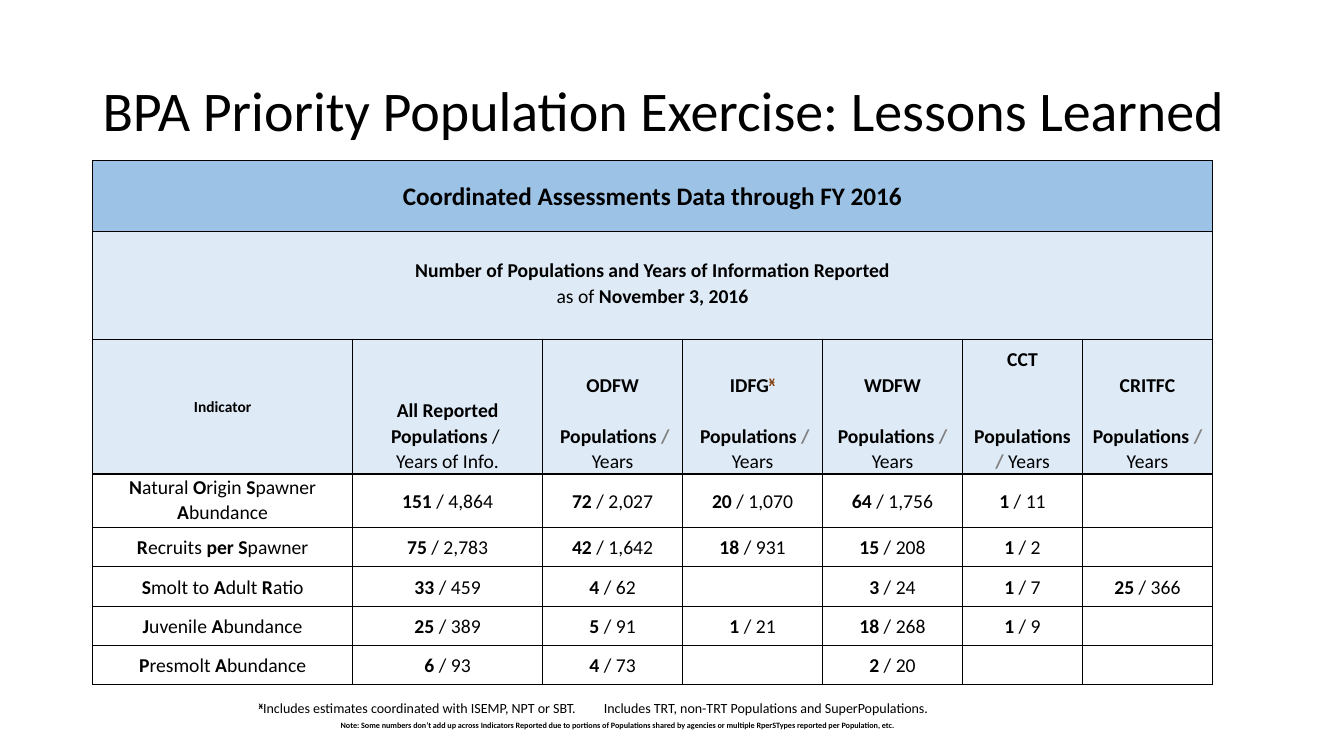
from lxml import etree
from pptx import Presentation
from pptx.dml.color import RGBColor as RGB
from pptx.enum.text import MSO_ANCHOR as ANCHOR, PP_ALIGN as ALIGN
from pptx.oxml.ns import qn
from pptx.util import Emu, Inches, Pt

COLORS = {"ink": "000000", "grey": "7F7F7F", "brown": "833C0B",
          "banner": "9CC2E5", "header": "DEEAF6", "body": "FFFFFF"}
LINE = 18.3  # height in points of one 14 pt table line


def bold_marks(text):
    """Split text into runs; the parts between asterisks are bold."""
    return [(part, {"bold": i % 2 == 1}) for i, part in enumerate(text.split("*")) if part]


def write(p, content, font="Calibri", size=14, color="ink", bold=False, base=0,
          align=ALIGN.LEFT, spacing=1.0, before=0):
    """Fill a paragraph with marked text or with a list of (text, format) runs."""
    p.alignment, p.line_spacing, p.space_before = align, spacing, Pt(before)
    for text, own in bold_marks(content) if isinstance(content, str) else content:
        r = p.add_run()
        r.text = text
        r.font.name = font
        r.font.size = Pt(own.get("size", size))
        r.font.bold = own.get("bold", bold)
        r.font.color.rgb = RGB.from_string(COLORS[own.get("color", color)])
        if own.get("base", base):
            r.font._element.set("baseline", str(own.get("base", base) * 1000))


class Slide:
    """A slide on a square grid 134.4 columns wide and 75.6 rows high."""

    def __init__(self, prs):
        self.s = prs.slides.add_slide(prs.slide_layouts[6])
        self.unit = prs.slide_width / 134.4

    def grid(self, *lengths):
        return [Emu(round(n * self.unit)) for n in lengths]

    def text(self, box, paragraphs, anchor=ANCHOR.TOP, **fmt):
        tf = self.s.shapes.add_textbox(*self.grid(*box)).text_frame
        tf.word_wrap, tf.vertical_anchor = True, anchor
        for i, content in enumerate(paragraphs):
            write(tf.add_paragraph() if i else tf.paragraphs[0], content, **fmt)
        return tf

    def table(self, left, top, cols, rows):
        box = self.grid(left, top, sum(cols), sum(rows))
        t = self.s.shapes.add_table(len(rows), len(cols), *box).table
        t.first_row = t.horz_banding = False
        for col, width in zip(t.columns, self.grid(*cols)):
            col.width = width
        for row, height in zip(t.rows, self.grid(*rows)):
            row.height = height
        for cell in t.iter_cells():
            self.border(cell)
            self.cell(cell, [])
        return t

    def cell(self, cell, paragraphs, fill="body", anchor=ANCHOR.MIDDLE, gap=0, **fmt):
        """Style a cell; gap is the space in points above its last paragraph."""
        cell.margin_left = cell.margin_right = Inches(0.06)
        cell.margin_top = cell.margin_bottom = 0
        cell.vertical_anchor = anchor
        cell.fill.solid()
        cell.fill.fore_color.rgb = RGB.from_string(COLORS[fill])
        tf = cell.text_frame
        for i, content in enumerate(paragraphs):
            write(tf.add_paragraph() if i else tf.paragraphs[0], content, align=ALIGN.CENTER,
                  spacing=1.07, before=gap if i else 0, **fmt)

    def border(self, cell):
        tcPr = cell._tc.get_or_add_tcPr()
        for side in ("a:lnL", "a:lnR", "a:lnT", "a:lnB"):
            ln = etree.SubElement(tcPr, qn(side), w=str(Pt(1)))
            fill = etree.SubElement(ln, qn("a:solidFill"))
            etree.SubElement(fill, qn("a:srgbClr"), val=COLORS["ink"])


# Agency name, superscript mark, text before the slash, blank lines below the name
AGENCIES = [("ODFW", "", " Populations", 1), ("IDFG", "Ӿ", " Populations", 1),
            ("WDFW", "", "Populations", 1), ("CCT", "", "Populations", 2),
            ("CRITFC", "", "Populations", 1)]

# Indicator, then populations / years: all reported and each agency
INDICATORS = [
    ("*N*atural *O*rigin *S*pawner *A*bundance",
     "151 / 4,864", "72 / 2,027", "20 / 1,070", "64 / 1,756", "1 / 11", ""),
    ("*R*ecruits *per S*pawner",
     "75 / 2,783", "42 / 1,642", "18 / 931", "15 / 208", "1 / 2", ""),
    ("*S*molt to *A*dult *R*atio",
     "33 / 459", "4 / 62", "", "3 / 24", "1 / 7", "25 / 366"),
    ("*J*uvenile *A*bundance",
     "25 / 389", "5 / 91", "1 / 21", "18 / 268", "1 / 9", ""),
    ("*P*resmolt *A*bundance",
     "6 / 93", "4 / 73", "", "2 / 20", "", ""),
]


def add_assessment_table(slide):
    t = slide.table(9.27, 16.03, [26, 19, 14, 14, 14, 12, 13],
                    [7.1, 10.8, 13.5, 5.35] + [3.93] * 4)

    # Banner rows
    for row in (0, 1):
        t.cell(row, 0).merge(t.cell(row, 6))
    slide.cell(t.cell(0, 0), ["*Coordinated Assessments Data through FY 2016*"],
               fill="banner", size=18)
    slide.cell(t.cell(1, 0), ["*Number of Populations and Years of Information Reported*",
                              "as of *November 3, 2016*"], fill="header")
    t.cell(1, 0).margin_bottom = Inches(0.04)

    # Column headings
    slide.cell(t.cell(2, 0), ["*Indicator*"], fill="header", size=11)
    slide.cell(t.cell(2, 1), ["*All Reported Populations* / ", "Years of Info."],
               fill="header", anchor=ANCHOR.BOTTOM)
    for col, (agency, mark, populations, blanks) in enumerate(AGENCIES, 2):
        name = [(agency, {})] + ([(mark, {"color": "brown", "base": 30})] if mark else [])
        units = [(populations, {}), (" / ", {"color": "grey"}), ("Years", {"bold": False})]
        slide.cell(t.cell(2, col), [name, units], fill="header", anchor=ANCHOR.BOTTOM,
                   gap=blanks * LINE, bold=True)

    # Indicator rows
    for row, (indicator, *counts) in enumerate(INDICATORS, 3):
        slide.cell(t.cell(row, 0), [indicator], anchor=ANCHOR.TOP if row == 3 else ANCHOR.MIDDLE)
        for col, count in enumerate(counts, 1):
            if count:
                populations, years = count.split(" / ")
                slide.cell(t.cell(row, col), [f"*{populations}* / {years}"])


def add_footnotes(slide):
    coverage = [(" ", {"size": 18}), ("Ӿ", {"bold": True, "base": 30}),
                ("Includes estimates coordinated with ISEMP, NPT or SBT.\t"
                 "Includes TRT, non-TRT Populations and SuperPopulations.", {})]
    note = [("Note: Some numbers don’t add up across Indicators Reported due to portions of "
             "Populations shared by agencies or multiple RperSTypes reported per Population, etc.",
             {"bold": True, "base": 30})]
    tf = slide.text((24.3, 68.35, 76.6, 5.75), [coverage, note], size=10)
    first, second = (p._p.get_or_add_pPr() for p in tf.paragraphs)
    tabs = etree.SubElement(first, qn("a:tabLst"))
    etree.SubElement(tabs, qn("a:tab"), pos=str(Inches(3.48)), algn="l")
    second.set("marL", str(Inches(0.87)))
    second.set("indent", "0")


def main():
    prs = Presentation()
    prs.slide_width, prs.slide_height = Inches(13.33), Inches(7.5)
    slide = Slide(prs)
    slide.text((9.27, 4.03, 115.9, 14.6), ["BPA Priority Population Exercise: Lessons Learned"],
               anchor=ANCHOR.MIDDLE, size=40, spacing=0.9)
    add_assessment_table(slide)
    add_footnotes(slide)
    prs.save("out.pptx")


if __name__ == "__main__":
    main()
